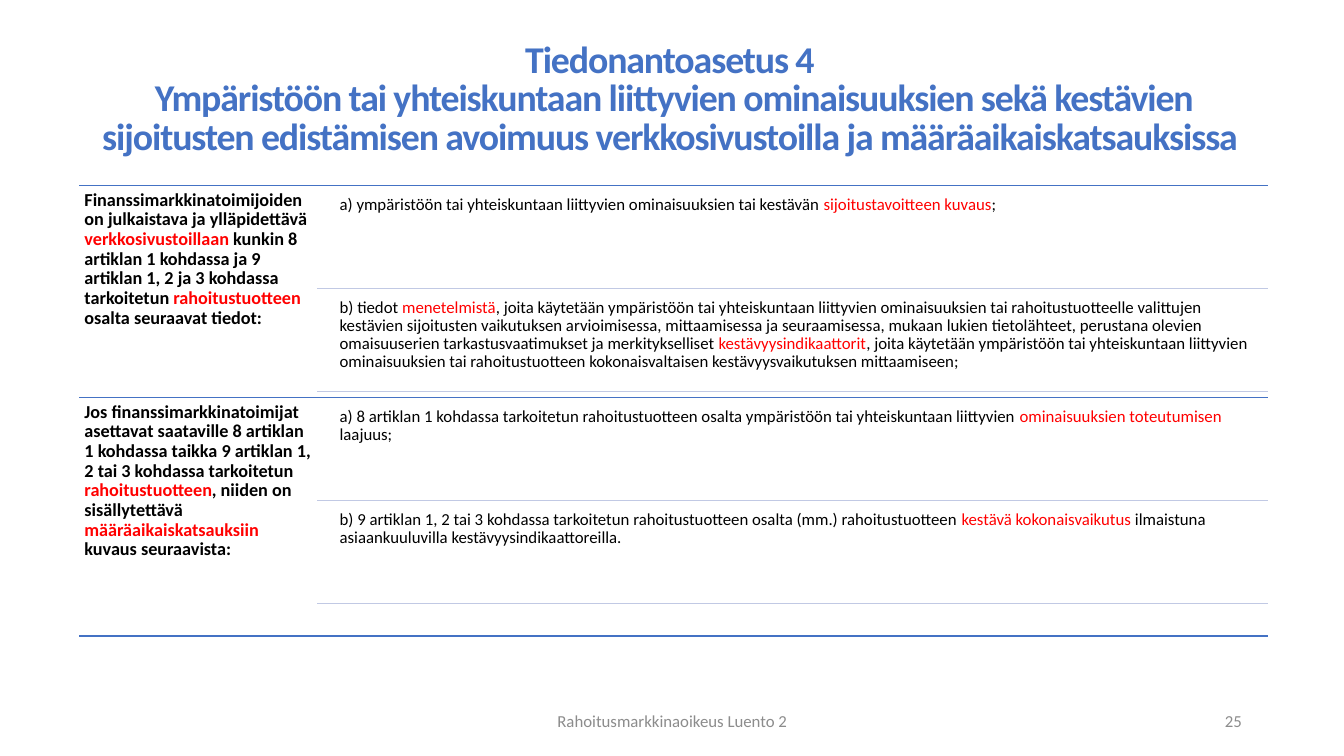
from dataclasses import dataclass

from lxml.etree import SubElement
from pptx import Presentation
from pptx.dml.color import RGBColor as RGB
from pptx.enum.shapes import MSO_CONNECTOR as Conn
from pptx.enum.text import MSO_ANCHOR as Anchor, MSO_AUTO_SIZE as Auto, PP_ALIGN as Align
from pptx.oxml.ns import qn
from pptx.util import Cm, Pt


@dataclass(frozen=True)
class Theme:
    font: str = "Calibri"
    blue: RGB = RGB(0x44, 0x72, 0xC4)
    pale: RGB = RGB(0xC1, 0xC9, 0xE4)
    red: RGB = RGB(0xFF, 0, 0)
    black: RGB = RGB(0, 0, 0)
    gray: RGB = RGB(0x8C, 0x8C, 0x8C)
    title: Pt = Pt(27)
    head: Pt = Pt(13)
    small: Pt = Pt(12)


theme = Theme()
LEFT, RIGHT = 2, 31.95
SPLIT, INDENT = 8, 8.43
TOP, BLOCK, STEP = 4.67, 5.34, 2.6

# In each text, every second piece is red
blocks = [
    (
        ["Finanssimarkkinatoimijoiden on julkaistava ja ylläpidettävä ",
         "verkkosivustoillaan",
         " kunkin 8 artiklan 1 kohdassa ja 9 artiklan 1, 2 ja 3 kohdassa tarkoitetun ",
         "rahoitustuotteen",
         " osalta seuraavat tiedot:"],
        [["a) ympäristöön tai yhteiskuntaan liittyvien ominaisuuksien tai kestävän ",
          "sijoitustavoitteen kuvaus",
          ";"],
         ["b) tiedot ",
          "menetelmistä",
          ", joita käytetään ympäristöön tai yhteiskuntaan liittyvien ominaisuuksien tai "
          "rahoitustuotteelle valittujen kestävien sijoitusten vaikutuksen arvioimisessa, "
          "mittaamisessa ja seuraamisessa, mukaan lukien tietolähteet, perustana olevien "
          "omaisuuserien tarkastusvaatimukset ja merkitykselliset ",
          "kestävyysindikaattorit",
          ", joita käytetään ympäristöön tai yhteiskuntaan liittyvien ominaisuuksien tai "
          "rahoitustuotteen kokonaisvaltaisen kestävyysvaikutuksen mittaamiseen;"]],
    ),
    (
        ["Jos finanssimarkkinatoimijat asettavat saataville 8 artiklan 1 kohdassa taikka "
         "9 artiklan 1, 2 tai 3 kohdassa tarkoitetun ",
         "rahoitustuotteen",
         ", niiden on sisällytettävä ",
         "määräaikaiskatsauksiin",
         " kuvaus seuraavista:"],
        [["a) 8 artiklan 1 kohdassa tarkoitetun rahoitustuotteen osalta ympäristöön tai "
          "yhteiskuntaan liittyvien ",
          "ominaisuuksien toteutumisen ",
          "laajuus;"],
         ["b) 9 artiklan 1, 2 tai 3 kohdassa tarkoitetun rahoitustuotteen osalta (mm.) "
          "rahoitustuotteen ",
          "kestävä kokonaisvaikutus ",
          "ilmaistuna asiaankuuluvilla kestävyysindikaattoreilla."]],
    ),
]

prs = Presentation()
prs.slide_width, prs.slide_height = Cm(33.87), Cm(19.05)
slide = prs.slides.add_slide(prs.slide_layouts[5])


def rule(x, y, color):
    """Draw a thin level line from x to the right margin."""
    line = slide.shapes.add_connector(Conn.STRAIGHT, Cm(x), Cm(y), Cm(RIGHT), Cm(y))
    line.line.color.rgb = color
    line.line.width = Pt(1)
    SubElement(line._element.spPr, qn("a:effectLst"))


def write(x, y, w, h, parts, size, color=theme.black, bold=False, pad=0.13,
          align=Align.LEFT, anchor=Anchor.TOP, pitch=0.9):
    """Add a text box whose every second run is red."""
    frame = slide.shapes.add_textbox(Cm(x), Cm(y), Cm(w), Cm(h)).text_frame
    frame.word_wrap = True
    frame.vertical_anchor = anchor
    frame.margin_left = frame.margin_right = Cm(pad)
    frame.margin_top = frame.margin_bottom = Cm(0.13)
    para = frame.paragraphs[0]
    para.alignment, para.line_spacing = align, pitch
    for i, part in enumerate(parts):
        run = para.add_run()
        run.text = part
        run.font.name, run.font.size, run.font.bold = theme.font, size, bold
        run.font.color.rgb = theme.red if i % 2 else color


# Title
title = slide.shapes.title
title.left, title.top, title.width, title.height = Cm(LEFT), Cm(1.07), Cm(29.95), Cm(3.33)
frame = title.text_frame
frame.auto_size, frame.word_wrap, frame.vertical_anchor = Auto.NONE, True, Anchor.TOP
frame.margin_left = frame.margin_right = frame.margin_top = frame.margin_bottom = 0
para = frame.paragraphs[0]
para.alignment, para.line_spacing = Align.CENTER, 0.85
lines = [
    "Tiedonantoasetus 4 ",
    "Ympäristöön tai yhteiskuntaan liittyvien ominaisuuksien sekä kestävien sijoitusten "
    "edistämisen avoimuus verkkosivustoilla ja määräaikaiskatsauksissa ",
]
for i, text in enumerate(lines):
    if i:
        para.add_line_break()
    run = para.add_run()
    run.text = text
    run.font.name, run.font.size, run.font.bold = theme.font, theme.title, True
    run.font.color.rgb = theme.blue
    run.font._element.set("spc", "-80")

# Blocks: a bold head at left, ruled items at right
for i, (head, items) in enumerate(blocks):
    y = TOP + i * BLOCK
    rule(LEFT, y, theme.blue)
    write(LEFT, y, SPLIT - LEFT, BLOCK, head, theme.head, bold=True)
    for j, item in enumerate(items):
        top = y + 0.13 + j * STEP
        write(INDENT, top, RIGHT - INDENT, 2.47, item, theme.small)
        rule(SPLIT, top + 2.47, theme.pale)
rule(LEFT, 16.03, theme.blue)

# Footer
feet = [
    (11.23, 11.43, "Rahoitusmarkkinaoikeus Luento 2", Align.CENTER),
    (23.93, 7.62, "25", Align.RIGHT),
]
for x, w, text, align in feet:
    write(x, 17.65, w, 1.02, [text], theme.small, theme.gray, pad=0.25,
          align=align, anchor=Anchor.MIDDLE, pitch=1.0)

prs.save("out.pptx")
